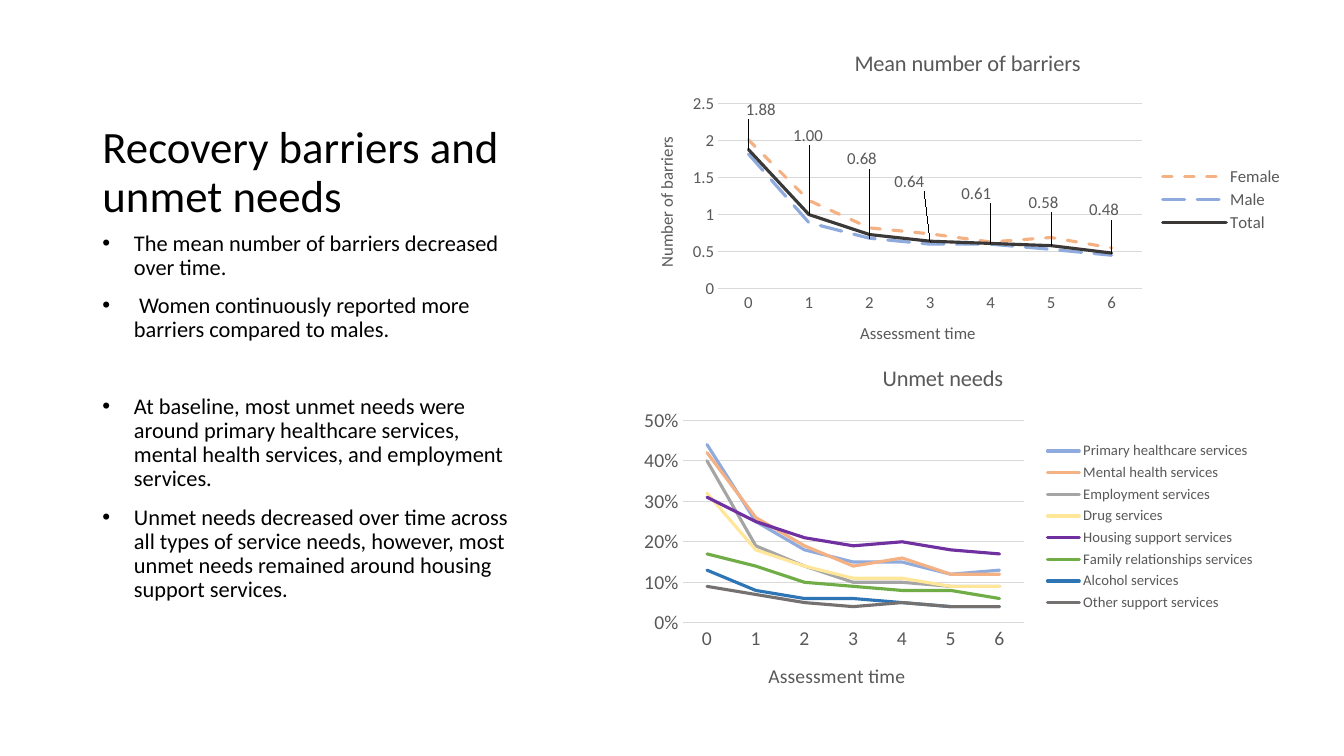
from dataclasses import dataclass
from lxml.etree import SubElement
from pptx import Presentation
from pptx.chart.data import CategoryChartData
from pptx.dml.color import RGBColor
from pptx.enum.chart import (XL_CHART_TYPE, XL_LABEL_POSITION, XL_LEGEND_POSITION,
                             XL_TICK_MARK)
from pptx.enum.dml import MSO_LINE
from pptx.enum.text import MSO_ANCHOR, MSO_AUTO_SIZE, PP_ALIGN
from pptx.oxml import parse_xml
from pptx.oxml.ns import nsdecls, qn
from pptx.util import Pt


@dataclass(frozen=True)
class Theme:
    font: str = "Calibri"
    text: str = "000000"
    muted: str = "595959"
    grid: str = "D9D9D9"
    title: float = 32
    body: float = 16
    chart_title: float = 16
    series_width: float = 2.25
    grid_width: float = 0.75


THEME = Theme()

# Content
TITLE = "Recovery barriers and unmet needs"
BULLETS = [  # text, space before
    ("The mean number of barriers decreased over time.", 10),
    (" Women continuously reported more barriers compared to males.", 10),
    ("At baseline, most unmet needs were around primary healthcare services, "
     "mental health services, and employment services.", 37.5),
    ("Unmet needs decreased over time across all types of service needs, however, "
     "most unmet needs remained around housing support services.", 10),
]
TIMES = [str(n) for n in range(7)]

# Series: name, colour, dash, values, labels {point: shift as share of the chart}
# Places inside a chart are shares of its width and height
UNMET = {
    "box": (451.5, 248.5, 451.5, 258.5),
    "title": ("Unmet needs", (0.39, 0.03)),
    "x_title": ("Assessment time", (0.21, 0.86)),
    "y_title": None,
    "plot": (0.08, 0.2, 0.54, 0.56),
    "legend": (0.65, 0.25, 0.34, 0.49),
    "size": 14, "legend_size": 10.5,
    "top": 0.5, "step": 0.1, "format": "0%",
    "series": [
        ("Primary healthcare services", "8FAADC", None,
         (0.44, 0.25, 0.18, 0.15, 0.15, 0.12, 0.13), {}),
        ("Mental health services", "F4B183", None,
         (0.42, 0.26, 0.19, 0.14, 0.16, 0.12, 0.12), {}),
        ("Employment services", "A5A5A5", None,
         (0.40, 0.19, 0.14, 0.10, 0.10, 0.09, 0.09), {}),
        ("Drug services", "FFE699", None,
         (0.32, 0.18, 0.14, 0.11, 0.11, 0.09, 0.09), {}),
        ("Housing support services", "7030A0", None,
         (0.31, 0.25, 0.21, 0.19, 0.20, 0.18, 0.17), {}),
        ("Family relationships services", "70AD47", None,
         (0.17, 0.14, 0.10, 0.09, 0.08, 0.08, 0.06), {}),
        ("Alcohol services", "2E75B6", None,
         (0.13, 0.08, 0.06, 0.06, 0.05, 0.04, 0.04), {}),
        ("Other support services", "767171", None,
         (0.09, 0.07, 0.05, 0.04, 0.05, 0.04, 0.04), {}),
    ],
}
BARRIERS = {
    "box": (451.5, 24.5, 473, 236),
    "title": ("Mean number of barriers", (0.33, 0.03)),
    "x_title": ("Assessment time", (0.34, 0.86)),
    "y_title": ("Number of barriers", (0.03, 0.3)),
    "plot": (0.13, 0.21, 0.64, 0.56),
    "legend": (0.79, 0.39, 0.2, 0.22),
    "size": 12, "legend_size": 12,
    "top": 2.5, "step": 0.5, "format": "General",
    "series": [
        ("Female", "F4B183", MSO_LINE.DASH,
         (2.01, 1.19, 0.82, 0.74, 0.63, 0.69, 0.55), {}),
        ("Male", "8FAADC", MSO_LINE.LONG_DASH,
         (1.82, 0.89, 0.68, 0.60, 0.60, 0.53, 0.45), {2: (-0.04, -0.24)}),
        ("Total", "3B3838", None,
         (1.88, 1.00, 0.73, 0.64, 0.61, 0.58, 0.48),
         {0: (-0.01, -0.12), 1: (-0.03, -0.24), 3: (-0.06, -0.18),
          4: (-0.05, -0.15), 5: (-0.04, -0.13), 6: (-0.04, -0.13)}),
    ],
}


def style(font, size, color=THEME.muted):
    font.name, font.size, font.bold = THEME.font, Pt(size), False
    font.color.rgb = RGBColor.from_string(color)


def place(element, index, spot, shift=False):
    """Give a chart part a manual layout: x, y and, if present, w, h."""
    for old in element.findall(qn("c:layout")):
        element.remove(old)
    layout = parse_xml(f'<c:layout {nsdecls("c")}/>')
    element.insert(index, layout)
    manual = SubElement(layout, qn("c:manualLayout"))
    if element.tag == qn("c:plotArea"):
        SubElement(manual, qn("c:layoutTarget"), val="inner")
    if not shift:
        for mode in ("xMode", "yMode"):
            SubElement(manual, qn("c:" + mode), val="edge")
    for key, value in zip("xywh", spot):
        SubElement(manual, qn("c:" + key), val=str(value))


def add_title(title, text, spot, size):
    tf = title.text_frame
    tf.text = text
    style(tf.paragraphs[0].font, size)
    place(title._element, 1, spot)
    return tf


def add_labels(series, shifts, size):
    labels = series.data_labels
    labels.show_value = False
    for i, shift in shifts.items():
        label = series.points[i].data_label
        style(label.font, size)
        label.position = XL_LABEL_POSITION.RIGHT
        element = label._get_or_add_dLbl()
        place(element, 1, shift, shift=True)
        element.insert(2, parse_xml(
            f'<c:numFmt {nsdecls("c")} formatCode="0.00" sourceLinked="0"/>'))
    leader = labels._element.find(qn("c:showLeaderLines"))
    if leader is None:
        leader = SubElement(labels._element, qn("c:showLeaderLines"))
    leader.set("val", "1")


def add_line_chart(slide, plan):
    data = CategoryChartData()
    data.categories = TIMES
    for name, _, _, values, _ in plan["series"]:
        data.add_series(name, values)
    chart = slide.shapes.add_chart(
        XL_CHART_TYPE.LINE, *map(Pt, plan["box"]), data).chart
    size = plan["size"]
    style(chart.font, size)
    add_title(chart.chart_title, *plan["title"], THEME.chart_title)
    place(chart._chartSpace.chart.plotArea, 0, plan["plot"])

    # Axes
    x_axis, y_axis = chart.category_axis, chart.value_axis
    for axis in (x_axis, y_axis):
        axis.major_tick_mark = axis.minor_tick_mark = XL_TICK_MARK.NONE
        style(axis.tick_labels.font, size)
    y_axis.minimum_scale, y_axis.maximum_scale = 0, plan["top"]
    y_axis.major_unit = plan["step"]
    y_axis.tick_labels.number_format = plan["format"]
    y_axis.tick_labels.number_format_is_linked = False
    y_axis.format.line.fill.background()
    for line in (x_axis.format.line, y_axis.major_gridlines.format.line):
        line.color.rgb = RGBColor.from_string(THEME.grid)
        line.width = Pt(THEME.grid_width)
    add_title(x_axis.axis_title, *plan["x_title"], size)
    if plan["y_title"]:
        tf = add_title(y_axis.axis_title, *plan["y_title"], size)
        tf._txBody.bodyPr.set("rot", "-5400000")
        tf._txBody.bodyPr.set("vert", "horz")

    # Legend
    chart.has_legend = True
    chart.legend.position = XL_LEGEND_POSITION.RIGHT
    chart.legend.include_in_layout = False
    style(chart.legend.font, plan["legend_size"])
    place(chart.legend._element, 1, plan["legend"])

    # Lines and point labels
    chart.plots[0].vary_by_categories = False
    for series, (_, color, dash, _, shifts) in zip(chart.series, plan["series"]):
        series.smooth = False
        line = series.format.line
        line.color.rgb = RGBColor.from_string(color)
        line.width = Pt(THEME.series_width)
        if dash:
            line.dash_style = dash
        series._element.xpath("c:spPr/a:ln")[0].set("cap", "rnd")
        if shifts:
            add_labels(series, shifts, size)


def add_text(sp, box, items, size, anchor):
    sp.left, sp.top, sp.width, sp.height = map(Pt, box)
    tf = sp.text_frame
    tf.word_wrap, tf.auto_size, tf.vertical_anchor = True, MSO_AUTO_SIZE.NONE, anchor
    for i, (text, before) in enumerate(items):
        p = tf.add_paragraph() if i else tf.paragraphs[0]
        p.text, p.alignment, p.line_spacing = text, PP_ALIGN.LEFT, 0.9
        p.space_before = Pt(before)
        style(p.font, size, THEME.text)
    return tf


def main():
    prs = Presentation()
    prs.slide_width, prs.slide_height = Pt(960), Pt(540)
    slide = prs.slides.add_slide(prs.slide_layouts[1])

    # Title and bullets
    add_text(slide.shapes.title, (66, 36, 309.5, 126), [(TITLE, 0)],
             THEME.title, MSO_ANCHOR.BOTTOM)
    tf = add_text(slide.placeholders[1], (66, 162, 309.5, 300), BULLETS,
                  THEME.body, MSO_ANCHOR.TOP)
    for p in tf.paragraphs:
        pPr = p._p.get_or_add_pPr()
        pPr.set("marL", str(Pt(22.5)))
        pPr.set("indent", str(-Pt(22.5)))

    # Charts
    for plan in (UNMET, BARRIERS):
        add_line_chart(slide, plan)
    prs.save("out.pptx")


if __name__ == "__main__":
    main()
